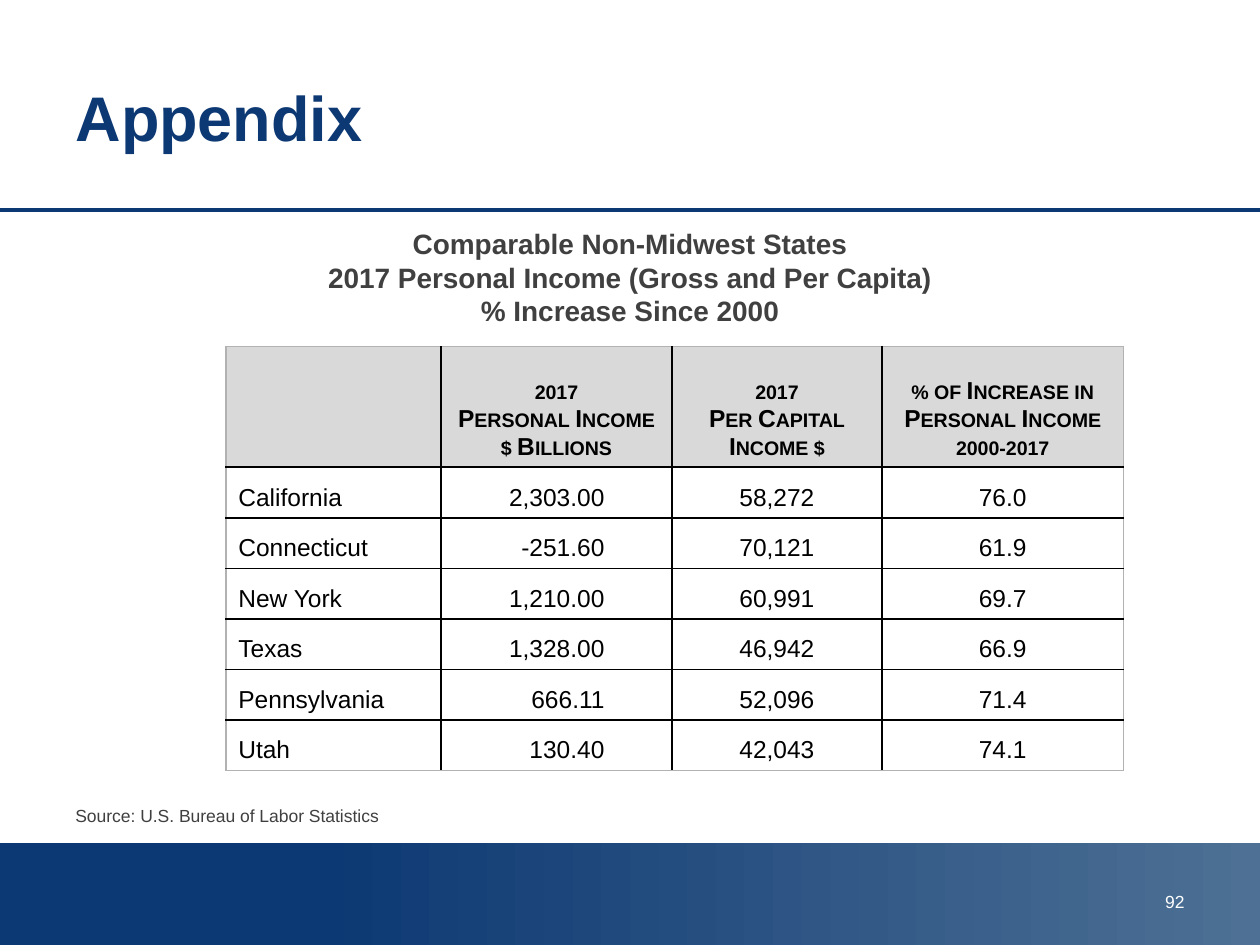
"""Build the appendix slide on personal income in comparable states."""
from lxml import etree
from pptx import Presentation
from pptx.dml.color import RGBColor
from pptx.enum.shapes import MSO_CONNECTOR, MSO_SHAPE
from pptx.enum.text import MSO_ANCHOR, MSO_AUTO_SIZE, PP_ALIGN
from pptx.oxml.ns import qn
from pptx.util import Pt

LEFT, CENTER, RIGHT = PP_ALIGN.LEFT, PP_ALIGN.CENTER, PP_ALIGN.RIGHT
TOP, MIDDLE, BOTTOM = MSO_ANCHOR.TOP, MSO_ANCHOR.MIDDLE, MSO_ANCHOR.BOTTOM
NAVY = RGBColor(0x0C, 0x38, 0x73)
STEEL = RGBColor(0x4D, 0x70, 0x94)
CHARCOAL = RGBColor(0x40, 0x40, 0x40)
HEADER_GRAY = RGBColor(0xD9, 0xD9, 0xD9)
EDGE_GRAY = RGBColor(0xB2, 0xB2, 0xB2)
BLACK = RGBColor(0, 0, 0)
WHITE = RGBColor(255, 255, 255)

TITLE = "Appendix"
HEADING = ("Comparable Non-Midwest States\v"
           "2017 Personal Income (Gross and Per Capita)\v"
           "% Increase Since 2000")
SOURCE = "Source: U.S. Bureau of Labor Statistics"
PAGE_NUMBER = "92"
ROWS = [
    ("", "2017\vPersonal Income\v$ Billions", "2017\vPer Capital\vIncome $",
     "% of Increase in\vPersonal Income\v2000-2017"),
    ("California", "2,303.00", "58,272", "76.0"),
    ("Connecticut", "-251.60", "70,121", "61.9"),
    ("New York", "1,210.00", "60,991", "69.7"),
    ("Texas", "1,328.00", "46,942", "66.9"),
    ("Pennsylvania", "666.11", "52,096", "71.4"),
    ("Utah", "130.40", "42,043", "74.1"),
]
COLUMN_WIDTHS = [123, 132, 120, 138]
COLUMN_ALIGNMENTS = [LEFT, RIGHT, CENTER, CENTER]
HEADER_HEIGHT, ROW_HEIGHT = 69, 28.9
TABLE_LEFT, TABLE_TOP = 129, 198
DECIMAL_MARGIN = 38.5

TITLE_FORMAT = {"size": Pt(36), "bold": True, "color": NAVY}
HEADING_FORMAT = {"size": Pt(16), "bold": True, "color": CHARCOAL}
SOURCE_FORMAT = {"size": Pt(10), "bold": False, "color": CHARCOAL}
NUMBER_FORMAT = {"size": Pt(10), "bold": False, "color": WHITE}
HEADER_FORMAT = {"size": Pt(14), "bold": True, "color": BLACK}
CELL_FORMAT = {"size": Pt(14), "bold": False, "color": BLACK}


def write(frame, text, values, alignment=LEFT, spacing=None):
    para = frame.paragraphs[0]
    para.text = text
    para.alignment = alignment
    para.space_before = Pt(0)
    para.line_spacing = spacing
    for span in para.runs:
        span.font.name = "Arial"
        for name, value in values.items():
            if name == "color":
                span.font.color.rgb = value
            else:
                setattr(span.font, name, value)
    return para


def place(shape, left, top, width, height):
    shape.left, shape.top = Pt(left), Pt(top)
    shape.width, shape.height = Pt(width), Pt(height)
    shape.text_frame.word_wrap = True
    shape.text_frame.auto_size = MSO_AUTO_SIZE.NONE
    return shape.text_frame


def add_label(page, text, values, bounds, alignment=LEFT):
    box = page.shapes.add_textbox(*map(Pt, bounds))
    write(place(box, *bounds), text, values, alignment)


def add_border(cell, side, color):
    line = etree.SubElement(cell._tc.get_or_add_tcPr(), qn(f"a:ln{side}"), w=str(Pt(1)))
    fill = etree.SubElement(line, qn("a:solidFill"))
    etree.SubElement(fill, qn("a:srgbClr"), val=str(color))


def add_band_and_rule(page):
    band = page.shapes.add_shape(MSO_SHAPE.RECTANGLE, 0, Pt(481.5), Pt(720), Pt(58.5))
    band.shadow.inherit = False
    band.line.fill.background()
    band.fill.gradient()
    band.fill.gradient_angle = 0
    for stop, position, color in zip(band.fill.gradient_stops, (0.25, 1), (NAVY, STEEL)):
        stop.position = position
        stop.color.rgb = color
    rule = page.shapes.add_connector(MSO_CONNECTOR.STRAIGHT, 0, Pt(120), Pt(720), Pt(120))
    rule.line.color.rgb = NAVY
    rule.line.width = Pt(2)
    etree.SubElement(rule._element.spPr, qn("a:effectLst"))


def fill_cell(cell, text, row, column):
    is_header = row == 0
    cell.vertical_anchor = BOTTOM
    alignment = CENTER if is_header else COLUMN_ALIGNMENTS[column]
    if alignment == RIGHT:
        cell.margin_right = Pt(DECIMAL_MARGIN)
    para = write(cell.text_frame, text, HEADER_FORMAT if is_header else CELL_FORMAT,
                 alignment, Pt(16))
    if is_header:
        for span in para.runs:
            span._r.get_or_add_rPr().set("cap", "small")
    outer_sides = {"L": column == 0, "R": column == len(COLUMN_WIDTHS) - 1,
                   "T": is_header, "B": row == len(ROWS) - 1}
    for side, is_outer in outer_sides.items():
        add_border(cell, side, EDGE_GRAY if is_outer else BLACK)
    cell.fill.solid()
    cell.fill.fore_color.rgb = HEADER_GRAY if is_header else WHITE


def add_income_table(page):
    heights = [HEADER_HEIGHT] + [ROW_HEIGHT] * (len(ROWS) - 1)
    table = page.shapes.add_table(
        len(ROWS), len(COLUMN_WIDTHS), Pt(TABLE_LEFT), Pt(TABLE_TOP),
        Pt(sum(COLUMN_WIDTHS)), Pt(sum(heights))).table
    table.horz_banding = False
    for column, width in zip(table.columns, COLUMN_WIDTHS):
        column.width = Pt(width)
    for row, (values, height) in enumerate(zip(ROWS, heights)):
        table.rows[row].height = Pt(height)
        for column, text in enumerate(values):
            fill_cell(table.cell(row, column), text, row, column)


def main():
    deck = Presentation()
    deck.slide_width, deck.slide_height = Pt(720), Pt(540)
    page = deck.slides.add_slide(deck.slide_layouts[1])
    add_band_and_rule(page)

    title = place(page.shapes.title, 36, 21.6, 648, 90)
    title.vertical_anchor = MIDDLE
    write(title, TITLE, TITLE_FORMAT)

    body = place(page.placeholders[1], 36, 126, 648, 68)
    body.vertical_anchor = TOP
    heading = write(body, HEADING, HEADING_FORMAT, CENTER, Pt(19.2))
    properties = heading._p.get_or_add_pPr()
    properties.set("marL", "0")
    properties.set("indent", "0")
    etree.SubElement(properties, qn("a:buNone"))

    add_income_table(page)
    add_label(page, SOURCE, SOURCE_FORMAT, (36, 456.5, 648, 20))
    add_label(page, PAGE_NUMBER, NUMBER_FORMAT, (516, 505.5, 168, 28.8), RIGHT)
    deck.save("out.pptx")


if __name__ == "__main__":
    main()
